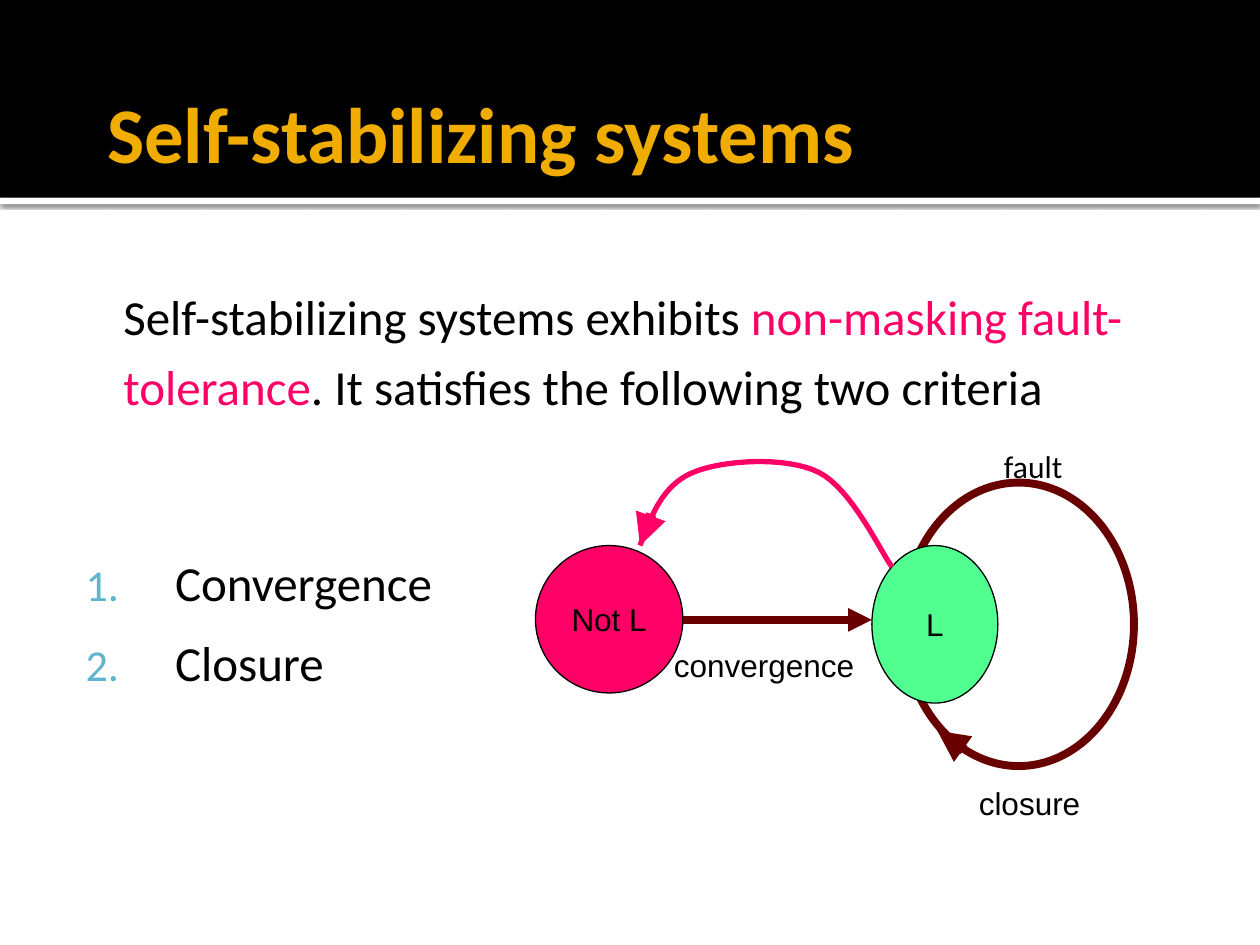
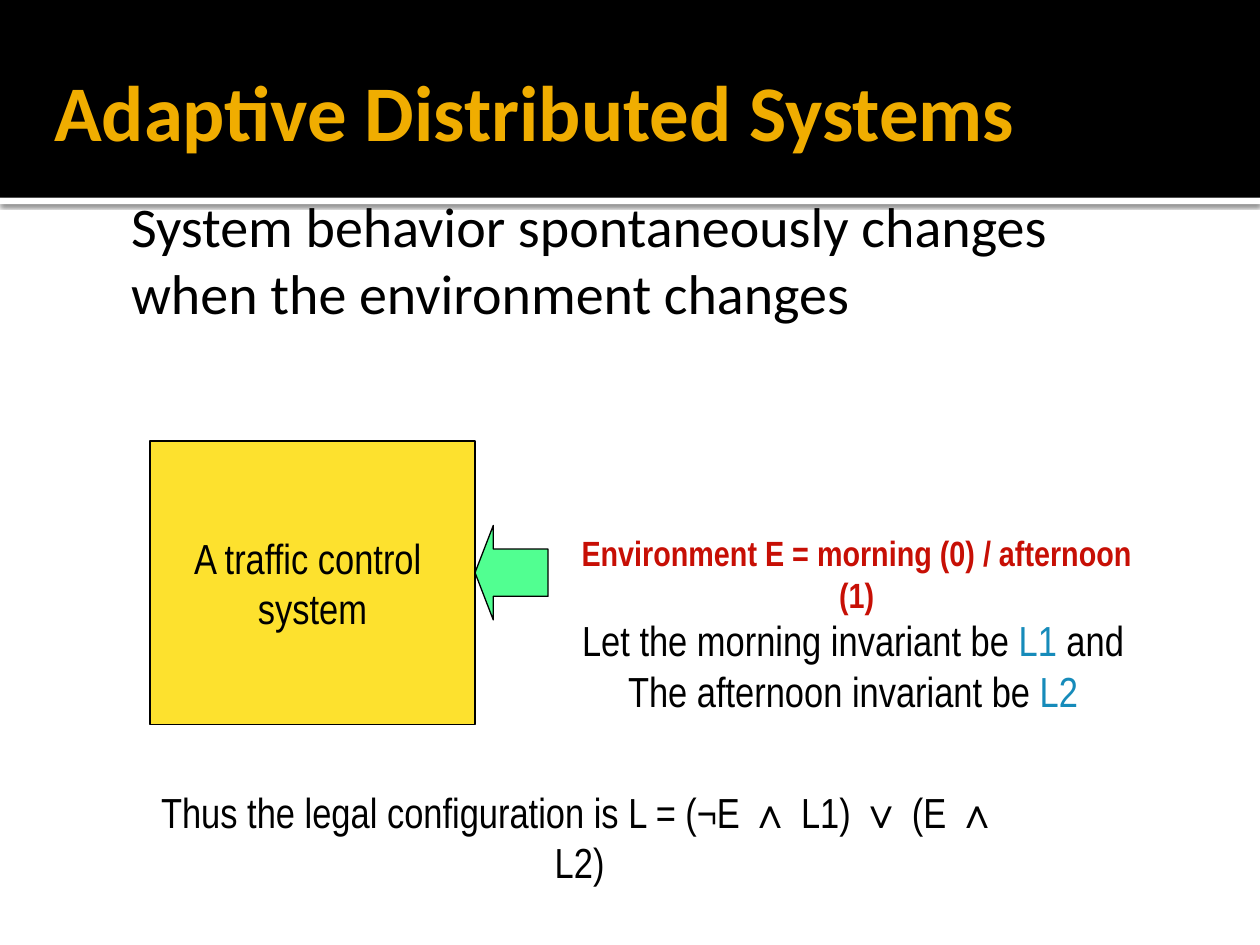
import pptx
import pptx.util
import pptx.dml.color
import pptx.enum.shapes
import pptx.enum.text
import pptx.oxml
import pptx.oxml.ns
from lxml import etree

Inches, Pt = pptx.util.Inches, pptx.util.Pt
SHAPE = pptx.enum.shapes.MSO_SHAPE
ALIGN = pptx.enum.text.PP_ALIGN
ANCHOR = pptx.enum.text.MSO_ANCHOR
qn = pptx.oxml.ns.qn

COLORS = {
    "black": "000000", "white": "FFFFFF", "title": "F0AD00", "number": "60B5CC",
    "pink": "FF0066", "maroon": "680000", "green": "51FF91", "yellow": "FDE12E",
    "red": "C70F05", "blue": "168BBA",
}
TITLE_ONLY = 5
BODY_INSETS = (0.06, 0.1, 0.1, 0.05)
TEXT_INSETS = (0.1, 0.05, 0.1, 0.05)


def rgb(name):
    return pptx.dml.color.RGBColor.from_string(COLORS[name])


def inches(*lengths):
    return [Inches(n) for n in lengths]


# Text helpers
def add_run(p, text, size, font, color="black", bold=False):
    r = p.add_run()
    r.text = text
    r.font.size, r.font.name, r.font.bold = Pt(size), font, bold
    r.font.color.rgb = rgb(color)


def set_insets(tf, insets):
    tf.margin_left, tf.margin_top, tf.margin_right, tf.margin_bottom = inches(*insets)


def write(tf, paragraphs, size, font, align=ALIGN.LEFT, bold=False):
    """Each paragraph is a list of (text, color) runs."""
    for i, runs in enumerate(paragraphs):
        p = tf.paragraphs[0] if i == 0 else tf.add_paragraph()
        p.alignment = align
        for text, color in runs:
            add_run(p, text, size, font, color, bold)


def add_text(slide, box, paragraphs, size, font, align=ALIGN.LEFT, bold=False,
             insets=TEXT_INSETS):
    tf = slide.shapes.add_textbox(*inches(*box)).text_frame
    tf.word_wrap = True
    set_insets(tf, insets)
    write(tf, paragraphs, size, font, align, bold)
    return tf


def indent(p, left, first):
    pPr = p._p.get_or_add_pPr()
    pPr.set("marL", str(Inches(left)))
    pPr.set("indent", str(Inches(first)))
    return pPr


def number(p):
    pPr = indent(p, 1.08, -0.71)
    color = etree.SubElement(pPr, qn("a:buClr"))
    etree.SubElement(color, qn("a:srgbClr"), val=COLORS["number"])
    etree.SubElement(pPr, qn("a:buSzPct"), val="90000")
    etree.SubElement(pPr, qn("a:buFont"), typeface="+mj-lt")
    etree.SubElement(pPr, qn("a:buAutoNum"), type="arabicPeriod")


# Shape helpers
def add_shape(slide, kind, box, fill=None, line=None, width=0.75):
    sp = slide.shapes.add_shape(kind, *inches(*box))
    style(sp, fill, line, width)
    return sp


def style(sp, fill, line, width):
    sp.shadow.inherit = False
    if fill:
        sp.fill.solid()
        sp.fill.fore_color.rgb = rgb(fill)
    else:
        sp.fill.background()
    if line:
        sp.line.color.rgb = rgb(line)
        sp.line.width = Pt(width)
    else:
        sp.line.fill.background()


def label(sp, lines, size, font):
    tf = sp.text_frame
    tf.word_wrap = False
    tf.vertical_anchor = ANCHOR.MIDDLE
    write(tf, [[(text, "black")] for text in lines], size, font, ALIGN.CENTER)


def add_arrow(slide, start, end, color, width):
    line = slide.shapes.add_connector(
        pptx.enum.shapes.MSO_CONNECTOR.STRAIGHT, *inches(*start, *end))
    line.line.color.rgb = rgb(color)
    line.line.width = Pt(width)
    etree.SubElement(line.line._get_or_add_ln(), qn("a:tailEnd"), type="triangle")
    etree.SubElement(line._element.spPr, qn("a:effectLst"))


def bezier(p0, p1, p2, p3, steps=16):
    for i in range(1, steps + 1):
        t = i / steps
        weights = ((1 - t) ** 3, 3 * t * (1 - t) ** 2, 3 * t * t * (1 - t), t ** 3)
        yield tuple(sum(w * p[axis] for w, p in zip(weights, (p0, p1, p2, p3)))
                    for axis in (0, 1))


def add_curve(slide, points, color, width):
    """Draw joined cubic curves through points: start, then three per curve."""
    path_points = [inches(*pt) for i in range(0, len(points) - 1, 3)
                   for pt in bezier(*points[i:i + 4])]
    builder = slide.shapes.build_freeform(*inches(*points[0]))
    builder.add_line_segments(path_points, close=False)
    style(builder.convert_to_shape(), None, color, width)


# Shared header: bands live on the layout, behind the title
def add_bands(layout, slide):
    for ph in list(layout.placeholders)[1:]:
        ph.element.getparent().remove(ph.element)
    strip = add_shape(slide, SHAPE.RECTANGLE, (0, 1.57, 10, 0.05), "white")
    effects = strip.element.spPr.find(qn("a:effectLst"))
    shadow = etree.SubElement(effects, qn("a:outerShdw"), blurRad=str(Pt(2.5)),
                              dist=str(Pt(0.8)), dir="5400000", algn="tl",
                              rotWithShape="0")
    color = etree.SubElement(shadow, qn("a:srgbClr"), val=COLORS["black"])
    etree.SubElement(color, qn("a:alpha"), val="60000")
    band = add_shape(slide, SHAPE.RECTANGLE, (0, 0, 10, 1.57), "black")
    for sp in (strip, band):
        layout.placeholders[0].element.addprevious(sp.element)


def set_title(slide, box, text):
    title = slide.shapes.title
    title.left, title.top, title.width, title.height = inches(*box)
    tf = title.text_frame
    tf.word_wrap = True
    tf.vertical_anchor = ANCHOR.MIDDLE
    set_insets(tf, (0.1, 0.05, 0.05, 0.05))
    write(tf, [[(text, "title")]], 45, "Calibri", bold=True)


# Slide 1 regions
def criteria(slide, x, y):
    intro = add_text(slide, (x, y, 8.87, 1.4), [[
        ("Self-stabilizing systems exhibits ", "black"),
        ("non-masking fault-tolerance", "pink"),
        (". It satisfies the following two criteria", "black")]],
        28, "Calibri", insets=BODY_INSETS)
    indent(intro.paragraphs[0], 0.67, 0)
    names = add_text(slide, (x, y + 2.11, 3.8, 1.4),
                     [[("Convergence", "black")], [("Closure", "black")]],
                     28, "Calibri", insets=BODY_INSETS)
    for p in names.paragraphs:
        p.space_after = Pt(5.6)
        number(p)
    for p in intro.paragraphs + names.paragraphs:
        p.line_spacing = 1.2


def state_diagram(slide, x, y):
    def at(dx, dy):
        return x + dx, y + dy

    # States, with the closure loop behind L
    not_l = add_shape(slide, SHAPE.OVAL, (*at(0, 0.83), 1.17, 1.17), "pink", "black")
    label(not_l, ["Not L"], 18, "Arial")
    add_arrow(slide, at(1.17, 1.42), at(2.67, 1.42), "maroon", 4.5)
    add_shape(slide, SHAPE.OVAL, (*at(2.92, 0.33), 1.83, 2.25), None, "maroon", 4.5)
    legal = add_shape(slide, SHAPE.OVAL, (*at(2.67, 0.83), 1, 1.25), "green", "black")
    label(legal, ["L"], 18, "Arial")
    add_arrow(slide, at(3.4, 2.45), at(3.19, 2.3), "maroon", 6)

    # Fault transition from L back to Not L
    add_curve(slide, [at(0.83, 0.83), at(0.92, 0.59), at(1.01, 0.35), at(1.25, 0.25),
                      at(1.49, 0.15), at(1.99, 0.12), at(2.25, 0.25),
                      at(2.51, 0.38), at(2.74, 0.88), at(2.83, 1)], "pink", 3)
    add_arrow(slide, at(0.92, 0.58), at(0.83, 0.83), "pink", 6)

    # Transition labels
    for text, dx, dy, font in (("convergence", 1, 1.58, "Arial"),
                               ("closure", 3.42, 2.67, "Arial"),
                               ("fault", 3.62, 0, "Calibri")):
        add_text(slide, (*at(dx, dy), 1.7, 0.4), [[(text, "black")]], 18, font)


# Slide 2 regions
def traffic_system(slide, x, y):
    system = add_shape(slide, SHAPE.RECTANGLE, (x, y, 2.58, 2.25), "yellow", "black")
    label(system, ["A traffic control ", "system"], 24, "Arial Narrow")
    arrow = add_shape(slide, SHAPE.LEFT_ARROW, (x + 2.58, y + 0.67, 0.58, 0.75),
                      "green", "black")
    arrow.adjustments[0], arrow.adjustments[1] = 0.5, 0.25


def invariants(slide, x, y):
    add_text(slide, (x, y, 4.9, 0.75),
             [[("Environment E = morning (0) / afternoon (1)", "red")]],
             20, "Arial Narrow", ALIGN.CENTER, bold=True)
    add_text(slide, (x, y + 0.66, 4.84, 0.9),
             [[("Let the morning invariant be", "black"), (" L1", "blue"),
               (" and", "black")],
              [("The afternoon invariant be ", "black"), ("L2", "blue")]],
             24, "Arial Narrow", ALIGN.CENTER)


def behavior(slide, x, y):
    tf = add_text(slide, (x, y, 8.92, 1.3), [[
        ("System behavior spontaneously changes when the environment changes",
         "black")]], 32, "Calibri", insets=BODY_INSETS)
    indent(tf.paragraphs[0], 0.48, 0)


def legal_configuration(slide, x, y):
    add_text(slide, (x, y, 6.84, 0.9),
             [[("Thus the legal configuration is L = (¬E ∧ L1) ∨ (E ∧ L2)", "black")]],
             24, "Arial Narrow", ALIGN.CENTER)


def self_stabilizing_slide(slide):
    set_title(slide, (0.75, 0.42, 8.5, 1.25), "Self-stabilizing systems")
    criteria(slide, 0.25, 2.08)
    state_diagram(slide, 4.25, 3.5)


def adaptive_slide(slide):
    set_title(slide, (0.33, 0.25, 9.5, 1.25), "Adaptive Distributed Systems")
    behavior(slide, 0.5, 1.42)
    traffic_system(slide, 1.19, 3.5)
    legal_configuration(slide, 1.18, 6.19)
    invariants(slide, 4.35, 4.17)


def main():
    prs = pptx.Presentation()
    prs.slide_width, prs.slide_height = inches(10, 7.5)
    layout = prs.slide_layouts[TITLE_ONLY]
    slides = [prs.slides.add_slide(layout) for _ in range(2)]
    add_bands(layout, slides[0])
    self_stabilizing_slide(slides[0])
    adaptive_slide(slides[1])
    prs.save("out.pptx")


if __name__ == "__main__":
    main()
